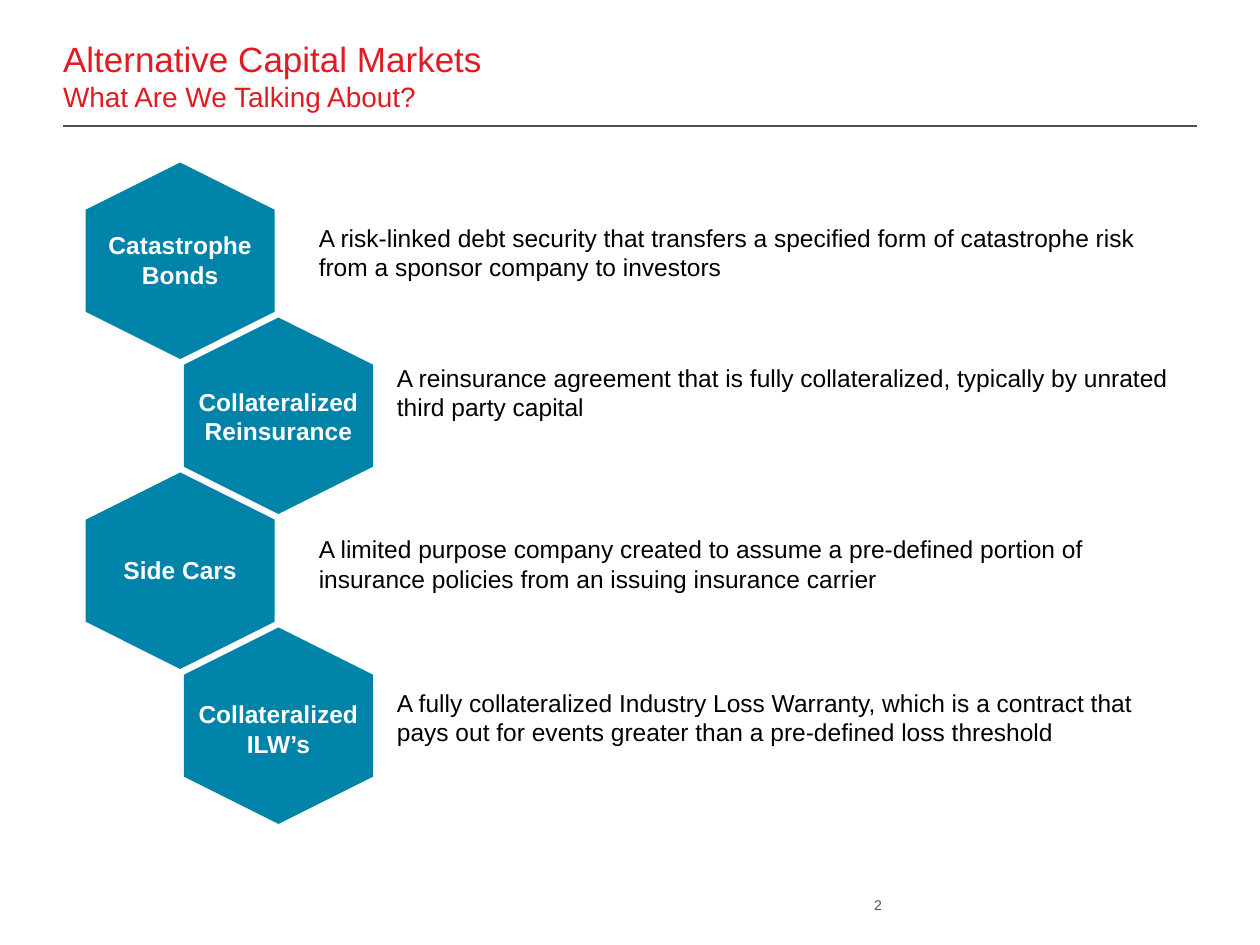
from lxml import etree
from pptx import Presentation
from pptx import util as u
from pptx.dml.color import RGBColor
from pptx.enum import shapes, text
from pptx.oxml import ns

COLORS = {"red": "E11B22", "teal": "0083A9", "gray": "4D4F53",
          "white": "FFFFFF", "black": "000000"}

HEX_W, HEX_H = 1.56, 1.5
HEX_TOP, HEX_STEP = 1.32, 1.23
HEX_LEFTS = (0.65, 1.43)
DESC_LEFTS = (2.53, 3.15)

TOPICS = [
    ("Catastrophe Bonds", 1.78, 0.57, 1.77, 6.92,
     "A risk-linked debt security that transfers a specified form of "
     "catastrophe risk from a sponsor company to investors"),
    ("Collateralized Reinsurance", 3.02, 0.57, 2.88, 6.25,
     "A reinsurance agreement that is fully collateralized, typically by "
     "unrated third party capital"),
    ("Side Cars", 4.36, 0.34, 4.24, 6.25,
     "A limited purpose company created to assume a pre-defined portion of "
     "insurance policies from an issuing insurance carrier"),
    ("Collateralized ILW’s", 5.5, 0.57, 5.46, 6.25,
     "A fully collateralized Industry Loss Warranty, which is a contract that "
     "pays out for events greater than a pre-defined loss threshold"),
]


def rgb(name):
    return RGBColor.from_string(COLORS[name])


def box(left, top, width, height):
    return [u.Inches(v) for v in (left, top, width, height)]


def place(sp, bounds):
    sp.left, sp.top, sp.width, sp.height = box(*bounds)


def set_text(sp, content, size, color, bold=False,
             align=text.PP_ALIGN.LEFT, anchor=text.MSO_ANCHOR.TOP,
             inset=0, wrap=True):
    tf = sp.text_frame
    tf.text = content
    tf.word_wrap = wrap
    tf.auto_size = text.MSO_AUTO_SIZE.NONE
    tf.vertical_anchor = anchor
    tf.margin_left = tf.margin_right = u.Inches(inset)
    tf.margin_top = tf.margin_bottom = u.Inches(inset / 2)
    p = tf.paragraphs[0]
    p.alignment = align
    p.space_before = u.Pt(0)
    for r in p.runs:
        r.font.name = "Arial"
        r.font.size = u.Pt(size)
        r.font.bold = bold
        r.font.color.rgb = rgb(color)
    return p


def remove_bullet(p):
    pPr = p._p.get_or_add_pPr()
    pPr.set("marL", "0")
    pPr.set("indent", "0")
    etree.SubElement(pPr, ns.qn("a:buNone"))


def add_title(s):
    sp = s.shapes.title
    place(sp, (0.5, 0.33, 9, 0.57))
    p = set_text(sp, "Alternative Capital Markets\vWhat Are We Talking About?",
                 20, "red", anchor=text.MSO_ANCHOR.BOTTOM)
    p.runs[1].font.size = u.Pt(16)


def add_rule(s):
    line = s.shapes.add_connector(shapes.MSO_CONNECTOR.STRAIGHT,
                                  *box(0.5, 1, 9.5, 1))
    line.line.color.rgb = rgb("gray")
    line.line.width = u.Pt(0.75)
    etree.SubElement(line._element.spPr, ns.qn("a:effectLst"))


def add_hexagon(s, left, top):
    sp = s.shapes.add_shape(shapes.MSO_SHAPE.HEXAGON,
                            *box(left, top, HEX_W, HEX_H))
    sp.rotation = 90
    sp.shadow.inherit = False
    sp.fill.solid()
    sp.fill.fore_color.rgb = rgb("teal")
    sp.line.fill.background()


def add_label(s, content, left, top, height):
    sp = s.shapes.add_textbox(*box(left, top, HEX_H, height))
    set_text(sp, content, 14, "white", bold=True,
             align=text.PP_ALIGN.CENTER, inset=0.1)


def add_body(s, content, bounds):
    sp = s.placeholders[1]
    place(sp, bounds)
    remove_bullet(set_text(sp, content, 14, "black"))


def add_description(s, content, bounds):
    sp = s.shapes.add_textbox(*box(*bounds))
    set_text(sp, content, 14, "black")


def add_page_number(s):
    sp = s.shapes.add_textbox(*box(6.68, 6.92, 0.32, 0.33))
    set_text(sp, "2", 8, "gray", align=text.PP_ALIGN.RIGHT,
             anchor=text.MSO_ANCHOR.BOTTOM)


def main():
    prs = Presentation()
    prs.slide_width, prs.slide_height = u.Inches(10), u.Inches(7.5)
    s = prs.slides.add_slide(prs.slide_layouts[1])
    add_rule(s)
    add_page_number(s)
    add_title(s)
    for i, topic in enumerate(TOPICS):
        label, label_top, label_height, desc_top, desc_width, desc = topic
        left = HEX_LEFTS[i % 2]
        add_hexagon(s, left, HEX_TOP + i * HEX_STEP)
        add_label(s, label, left + 0.03, label_top, label_height)
        add_desc = add_body if i == 0 else add_description
        add_desc(s, desc, (DESC_LEFTS[i % 2], desc_top, desc_width, 0.92))
    prs.save("out.pptx")


if __name__ == "__main__":
    main()
